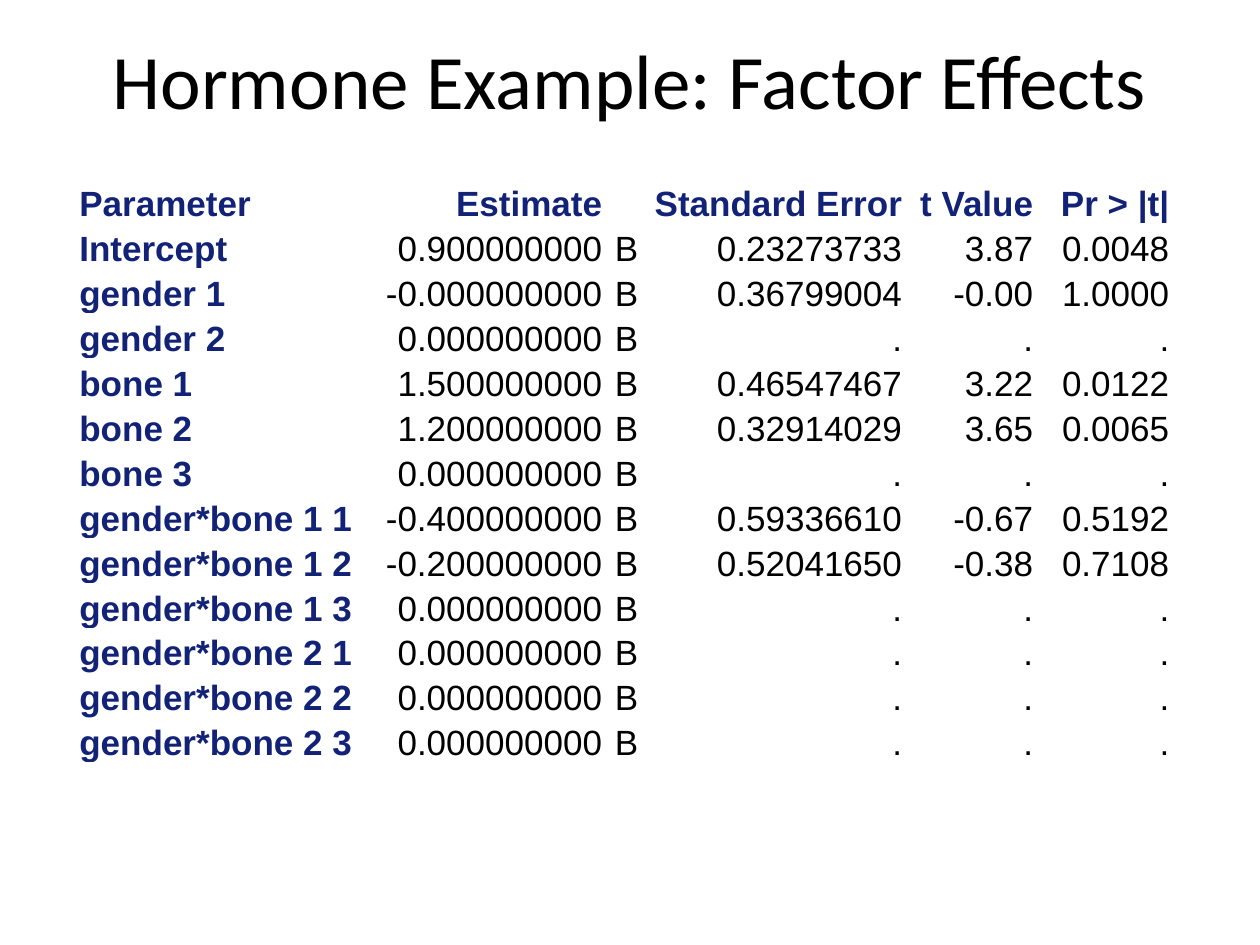
from pptx import Presentation
from pptx.dml.color import RGBColor
from pptx.enum.text import MSO_ANCHOR, PP_ALIGN
from pptx.util import Inches, Pt

BLACK = "000000"
NAVY = "112277"
COLUMN_WIDTHS = [2.35, 1.9, 0.25, 2.13, 1.04, 1.08]
HEADER = ["Parameter", "Estimate", "", "Standard Error", "t Value", "Pr > |t|"]
EFFECTS = [
    ("Intercept", "0.900000000", "0.23273733", "3.87", "0.0048"),
    ("gender 1", "-0.000000000", "0.36799004", "-0.00", "1.0000"),
    ("gender 2", "0.000000000", ".", ".", "."),
    ("bone 1", "1.500000000", "0.46547467", "3.22", "0.0122"),
    ("bone 2", "1.200000000", "0.32914029", "3.65", "0.0065"),
    ("bone 3", "0.000000000", ".", ".", "."),
    ("gender*bone 1 1", "-0.400000000", "0.59336610", "-0.67", "0.5192"),
    ("gender*bone 1 2", "-0.200000000", "0.52041650", "-0.38", "0.7108"),
    ("gender*bone 1 3", "0.000000000", ".", ".", "."),
    ("gender*bone 2 1", "0.000000000", ".", ".", "."),
    ("gender*bone 2 2", "0.000000000", ".", ".", "."),
    ("gender*bone 2 3", "0.000000000", ".", ".", "."),
]


def color(value):
    """Turn a hex string into a colour."""
    return RGBColor.from_string(value)


def write_text(frame, text, *, font, size, fill=BLACK, bold=False,
               align=PP_ALIGN.LEFT, line_spacing=None, gap=None):
    """Write one formatted paragraph into a text frame."""
    paragraph = frame.paragraphs[0]
    paragraph.alignment = align
    if line_spacing is not None:
        paragraph.line_spacing = line_spacing
    if gap is not None:
        paragraph.space_before = paragraph.space_after = Pt(gap)
    run = paragraph.add_run()
    run.text = text
    run.font.name = font
    run.font.size = Pt(size)
    run.font.bold = bold
    run.font.color.rgb = color(fill)


def add_title(slide, left, top, width, height):
    """Place the slide title in the given box."""
    title = slide.shapes.title
    title.left, title.top = Inches(left), Inches(top)
    title.width, title.height = Inches(width), Inches(height)
    title.text_frame.vertical_anchor = MSO_ANCHOR.MIDDLE
    write_text(title.text_frame, "Hormone Example: Factor Effects",
               font="Calibri", size=44, align=PP_ALIGN.CENTER)


def format_cell(cell, text, is_label, is_first_column):
    """Fill one table cell with a label or a value."""
    cell.fill.background()
    cell.vertical_anchor = MSO_ANCHOR.MIDDLE
    cell.margin_left = cell.margin_right = Inches(0.05)
    cell.margin_top = cell.margin_bottom = Inches(0)
    if text:
        write_text(cell.text_frame, text, font="Arial", size=20,
                   fill=NAVY if is_label else BLACK, bold=is_label,
                   align=PP_ALIGN.LEFT if is_first_column else PP_ALIGN.RIGHT,
                   line_spacing=1.15, gap=5)


def add_effects_table(slide, left, top, width, height):
    """Place the table of parameter estimates in the given box."""
    rows = [HEADER] + [[name, estimate, "B", *statistics]
                       for name, estimate, *statistics in EFFECTS]
    frame = slide.shapes.add_table(len(rows), len(HEADER), Inches(left),
                                   Inches(top), Inches(width), Inches(height))
    table = frame.table
    table.first_row = table.horz_banding = False
    for column, column_width in zip(table.columns, COLUMN_WIDTHS):
        column.width = Inches(column_width)
    for row_index, values in enumerate(rows):
        table.rows[row_index].height = Inches(0)
        for column_index, text in enumerate(values):
            format_cell(table.cell(row_index, column_index), text,
                        row_index == 0 or column_index == 0, column_index == 0)
    frame.height = Inches(height)


def main():
    """Build and save the slide."""
    presentation = Presentation()
    presentation.slide_width, presentation.slide_height = Inches(10), Inches(7.5)
    slide = presentation.slides.add_slide(presentation.slide_layouts[5])
    add_title(slide, 0.5, 0, 9, 1.25)
    add_effects_table(slide, 0.58, 1.42, 8.75, 4.98)
    presentation.save("out.pptx")


if __name__ == "__main__":
    main()
